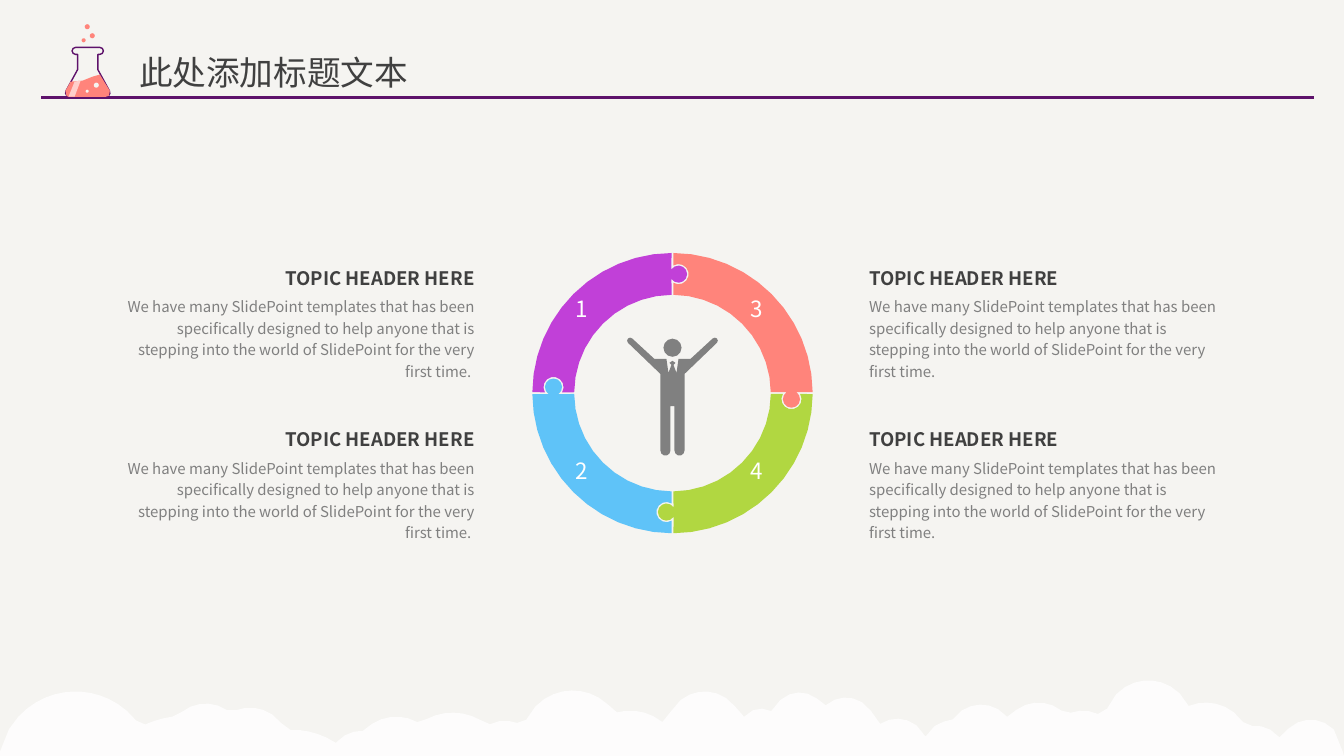
from math import acos, ceil, cos, degrees, radians, sin, sqrt

from lxml.etree import SubElement
from pptx import Presentation
from pptx.dml.color import RGBColor
from pptx.enum.shapes import MSO_CONNECTOR, MSO_SHAPE
from pptx.enum.text import MSO_ANCHOR, MSO_AUTO_SIZE, PP_ALIGN
from pptx.oxml.ns import qn
from pptx.util import Emu, Pt

PX = 9144  # EMU per px, 100 px to the inch
WIDTH, HEIGHT = 1333, 750
CLOUD_STEP = 9  # px between points of the cloud edge

# Cloud bumps: centre x, top y, radius
CLOUD_BUMPS = [
    (75, 686, 77), (185, 710, 101), (204, 698, 38), (248, 702, 39),
    (290, 724, 78), (359, 725, 34), (393, 711, 44), (449, 707, 56),
    (501, 715, 34), (568, 685, 51), (625, 705, 51), (699, 686, 38),
    (755, 703, 22), (793, 687, 28), (839, 692, 30), (890, 713, 31),
    (943, 715, 27), (973, 699, 34), (1030, 697, 37), (1074, 705, 36),
    (1139, 675, 44), (1196, 697, 45), (1245, 720, 31), (1300, 714, 32),
]
TOPIC_HEADER = "TOPIC HEADER HERE"
TOPIC_TEXT = ("We have many SlidePoint templates that has been specifically "
              "designed to help anyone that is stepping into the world of "
              "SlidePoint for the very first time.")


def color(value):
    return RGBColor.from_string(value)


def arc(x, y, radius, start, end):
    """Points along an arc, in degrees clockwise from the right."""
    widest_step = degrees(2 * acos(1 - 0.3 / radius))  # at most 0.3 px off
    steps = ceil(abs(end - start) / widest_step)
    angles = [radians(start + (end - start) * i / steps) for i in range(steps + 1)]
    return [(x + radius * cos(a), y + radius * sin(a)) for a in angles]


def mirrored(center_x, half):
    """Whole outline from its right half, given as offsets from the axis."""
    return ([(center_x + x, y) for x, y in half]
            + [(center_x - x, y) for x, y in reversed(half)])


def cloud_outline():
    points = [(0, HEIGHT)]
    for x in range(0, WIDTH, CLOUD_STEP):
        tops = [top + r - sqrt(r * r - (x - center) ** 2)
                for center, top, r in CLOUD_BUMPS if abs(x - center) <= r]
        points.append((x, min(tops + [HEIGHT])))
    return points + [(WIDTH, HEIGHT)]


def puzzle_outline(center_x, center_y, turns):
    """Top right quarter of the ring, turned clockwise by quarter turns."""
    points = (arc(0, 0, 139, -89.6, -0.4)
              + arc(118, 6, 8.5, -55.6, 235.6)   # knob
              + arc(0, 0, 97.5, -0.5, -89.5)
              + arc(6, -118, 10, 121.5, -121.5))  # notch
    for _ in range(turns):
        points = [(-y, x) for x, y in points]
    return [(center_x + x, center_y + y) for x, y in points]


class SlideBuilder:
    font_name = "Noto Sans CJK SC"
    dark, gray, paper = "404040", "808080", "F5F4F1"
    plum, coral, pink = "5E126B", "FF847B", "FFCECA"
    lime, sky, violet, white = "B1D741", "5FC3F8", "C140D8", "FFFFFF"

    def __init__(self, presentation):
        self.slide = presentation.slides.add_slide(presentation.slide_layouts[5])
        self.shapes = self.slide.shapes
        fill = self.slide.background.fill
        fill.solid()
        fill.fore_color.rgb = color(self.paper)

    def paint(self, shape, fill, line=None, opacity=None):
        shape.shadow.inherit = False
        shape.fill.solid()
        shape.fill.fore_color.rgb = color(fill)
        if opacity:
            value = shape.fill._xPr.find(".//" + qn("a:srgbClr"))
            SubElement(value, qn("a:alpha"), val=str(opacity * 1000))
        if line:
            shape.line.color.rgb = color(line)
            shape.line.width = Pt(1)
        else:
            shape.line.fill.background()

    def outline(self, points, fill, line=None, opacity=None):
        points = [(x * PX, y * PX) for x, y in points]
        builder = self.shapes.build_freeform(*points[0], scale=1.0)
        builder.add_line_segments(points[1:], close=True)
        self.paint(builder.convert_to_shape(), fill, line, opacity)

    def circle(self, left, top, size, fill):
        box = [Emu(v * PX) for v in (left, top, size, size)]
        self.paint(self.shapes.add_shape(MSO_SHAPE.OVAL, *box), fill)

    def line(self, x1, y1, x2, y2, stroke, width):
        ends = [Emu(v * PX) for v in (x1, y1, x2, y2)]
        connector = self.shapes.add_connector(MSO_CONNECTOR.STRAIGHT, *ends)
        connector.line.color.rgb = color(stroke)
        connector.line.width = Pt(width)
        SubElement(connector._element.spPr, qn("a:effectLst"))

    def style(self, paragraph, size, text_color, align, bold=False):
        paragraph.alignment = align
        font = paragraph.font
        font.size, font.bold, font.name = Pt(size), bold, self.font_name
        font.color.rgb = color(text_color)
        SubElement(font._element, qn("a:ea"), typeface=self.font_name)

    def title(self, left, top, width, height, text):
        shape = self.shapes.title
        shape.left, shape.top = Emu(left * PX), Emu(top * PX)
        shape.width, shape.height = Emu(width * PX), Emu(height * PX)
        frame = shape.text_frame
        frame.text = text
        frame.word_wrap = False
        frame.auto_size = MSO_AUTO_SIZE.NONE
        frame.vertical_anchor = MSO_ANCHOR.MIDDLE
        self.style(frame.paragraphs[0], 24, self.dark, PP_ALIGN.LEFT)

    def text_box(self, left, top, width, height):
        box = [Emu(v * PX) for v in (left, top, width, height)]
        return self.shapes.add_textbox(*box).text_frame

    def number(self, left, top, text):
        frame = self.text_box(left, top, 32, 37)
        frame.word_wrap = False
        frame.text = text
        self.style(frame.paragraphs[0], 16, self.white, PP_ALIGN.CENTER)

    def topic(self, left, top, align, header, text):
        frame = self.text_box(left, top, 350, 97)
        frame.word_wrap = True
        frame.margin_left = frame.margin_right = 0
        frame.margin_top = frame.margin_bottom = 0
        frame.text = f"{header}\n{text}"
        heading, body = frame.paragraphs
        self.style(heading, 13.3, self.dark, align, bold=True)
        self.style(body, 10.7, self.gray, align)
        for paragraph in frame.paragraphs:
            paragraph.line_spacing = 1.2
            paragraph.space_before = Pt(4)


def main():
    presentation = Presentation()
    presentation.slide_width = Emu(WIDTH * PX)
    presentation.slide_height = Emu(HEIGHT * PX)
    page = SlideBuilder(presentation)

    # Clouds
    page.outline(cloud_outline(), page.white, opacity=80)

    # Puzzle ring
    for turns, fill in enumerate([page.coral, page.lime, page.sky, page.violet]):
        page.outline(puzzle_outline(667, 390, turns), fill)

    # Person with raised arms
    page.circle(658, 336, 18, page.gray)
    person_half = ([(0, 358), (3, 360), (1, 362), (4, 370), (6, 356), (18, 356)]
                   + arc(42, 338, 3, -135, 45)
                   + [(12, 371)] + arc(7, 447, 5, 0, 180) + [(2, 403)])
    page.outline(mirrored(667, person_half), page.gray)

    # Numbers and topics
    sides = [(561, 121, PP_ALIGN.RIGHT, TOPIC_TEXT + " "),
             (734, 862, PP_ALIGN.LEFT, TOPIC_TEXT)]
    for column, (number_left, topic_left, align, text) in enumerate(sides):
        for row in range(2):
            page.number(number_left, 288 + 161 * row, str(2 * column + row + 1))
            page.topic(topic_left, 260 + 160 * row, align, TOPIC_HEADER, text)

    # Title and rule
    page.title(128, 46, 289, 50, "此处添加标题文本")
    page.line(41, 97, 1303, 97, page.plum, 2)

    # Flask with liquid and bubbles
    flask_half = (arc(12, 50.5, 3.5, -90, 90) + [(10, 54), (10, 69)]
                  + arc(18, 92, 4, -30, 90))
    page.outline(mirrored(87, flask_half), page.paper, line=page.plum)
    page.outline([(99, 74), (92, 76), (82, 80), (70, 81), (65, 90), (66, 95),
                  (68, 96), (105, 96), (108, 95), (109, 90)], page.coral)
    page.outline([(68, 96), (74, 96), (80, 80), (74, 81)], page.pink)
    for left, top, size, fill in [
            (85, 89, 3, page.paper), (93, 82, 5, page.paper),
            (81, 38, 4, page.coral), (89, 33, 5, page.coral),
            (84, 24, 5, page.coral)]:
        page.circle(left, top, size, fill)

    presentation.save("out.pptx")


if __name__ == "__main__":
    main()
